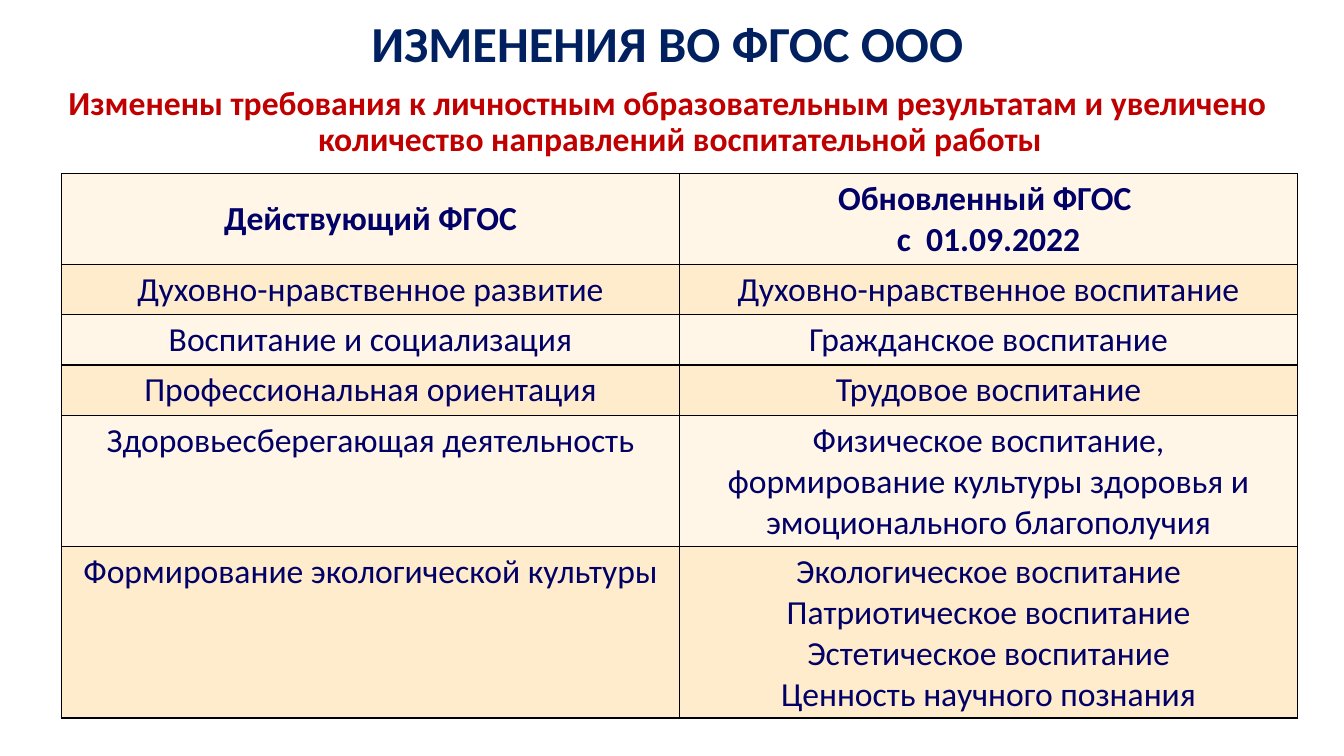
"""Build a slide comparing the current and updated educational standards."""
from lxml.etree import SubElement
from pptx import Presentation
from pptx.dml.color import RGBColor
from pptx.enum.text import MSO_ANCHOR as Anchor, PP_ALIGN as Align
from pptx.oxml.ns import qn
from pptx.util import Inches, Pt

TITLE = "ИЗМЕНЕНИЯ ВО ФГОС ООО"
SUBTITLE = ("Изменены требования к личностным образовательным результатам и увеличено "
            "количество направлений воспитательной работы")
ROWS = [
    (0.89, ["Действующий ФГОС"], ["Обновленный ФГОС ", "с  01.09.2022"]),
    (0.5, ["Духовно-нравственное развитие"], ["Духовно-нравственное воспитание"]),
    (0.5, ["Воспитание и социализация"], ["Гражданское воспитание"]),
    (0.5, ["Профессиональная ориентация"], ["Трудовое воспитание"]),
    (1.29, ["Здоровьесберегающая деятельность"],
     ["Физическое воспитание,", "формирование культуры здоровья и",
      "эмоционального благополучия"]),
    (1.69, ["Формирование экологической культуры"],
     ["Экологическое воспитание", "Патриотическое воспитание Эстетическое воспитание",
      "Ценность научного познания"]),
]
COLORS = {"title": "002060", "subtitle": "C00000", "text": "000066",
          "border": "000000", "light": "FFF6E7", "dark": "FFECCC"}
FONT = "Calibri"
WIDTH, HEIGHT = 13.33, 7.5
TITLE_BOX = (1.62, 0, 10, 0.92)
SUBTITLE_BOX = (0, 0.81, 13.24, 1.18)
TABLE_LEFT, TABLE_TOP, COLUMN_WIDTH = 0.61, 1.72, 6.13


def write(frame, lines, size, color, bold=True, spacing=None):
    """Fill a text frame with centred paragraphs."""
    for index, line in enumerate(lines):
        paragraph = frame.add_paragraph() if index else frame.paragraphs[0]
        paragraph.alignment = Align.CENTER
        paragraph.line_spacing = spacing
        run = paragraph.add_run()
        run.text = line
        run.font.name, run.font.size, run.font.bold = FONT, Pt(size), bold
        run.font.color.rgb = RGBColor.from_string(COLORS[color])


def add_borders(cell):
    """Draw a one-point line on every side of a cell."""
    properties = cell._tc.get_or_add_tcPr()
    for side in ("a:lnL", "a:lnR", "a:lnT", "a:lnB"):
        line = SubElement(properties, qn(side), w=str(Pt(1)))
        fill = SubElement(line, qn("a:solidFill"))
        SubElement(fill, qn("a:srgbClr"), val=COLORS["border"])


def add_title(slide):
    """Place the title and the subtitle."""
    title = slide.shapes.title
    title.left, title.top, title.width, title.height = map(Inches, TITLE_BOX)
    title.text_frame.word_wrap = True
    title.text_frame.vertical_anchor = Anchor.MIDDLE
    write(title.text_frame, [TITLE], 36, "title", spacing=0.9)

    subtitle = slide.shapes.add_textbox(*map(Inches, SUBTITLE_BOX)).text_frame
    subtitle.word_wrap = True
    write(subtitle, [SUBTITLE], 24, "subtitle", spacing=0.9)
    paragraph = subtitle.paragraphs[0]
    paragraph.space_before = Pt(10)
    indents = paragraph._p.get_or_add_pPr()
    indents.set("marL", str(Inches(0.25)))
    indents.set("indent", str(-Inches(0.25)))


def add_comparison(slide):
    """Place the two-column table."""
    total = sum(height for height, *_ in ROWS)
    table = slide.shapes.add_table(
        len(ROWS), 2, Inches(TABLE_LEFT), Inches(TABLE_TOP),
        Inches(2 * COLUMN_WIDTH), Inches(total)).table
    for column in table.columns:
        column.width = Inches(COLUMN_WIDTH)
    for row, (height, *cells) in enumerate(ROWS):
        table.rows[row].height = Inches(height)
        header = row == 0
        for column, lines in enumerate(cells):
            cell = table.cell(row, column)
            add_borders(cell)
            cell.fill.solid()
            band = "dark" if row % 2 else "light"
            cell.fill.fore_color.rgb = RGBColor.from_string(COLORS[band])
            cell.vertical_anchor = Anchor.MIDDLE if header else Anchor.TOP
            write(cell.text_frame, lines, 24, "text", bold=header)


def main():
    """Create and save the presentation."""
    presentation = Presentation()
    presentation.slide_width, presentation.slide_height = Inches(WIDTH), Inches(HEIGHT)
    slide = presentation.slides.add_slide(presentation.slide_layouts[5])
    add_title(slide)
    add_comparison(slide)
    presentation.save("out.pptx")


if __name__ == "__main__":
    main()
